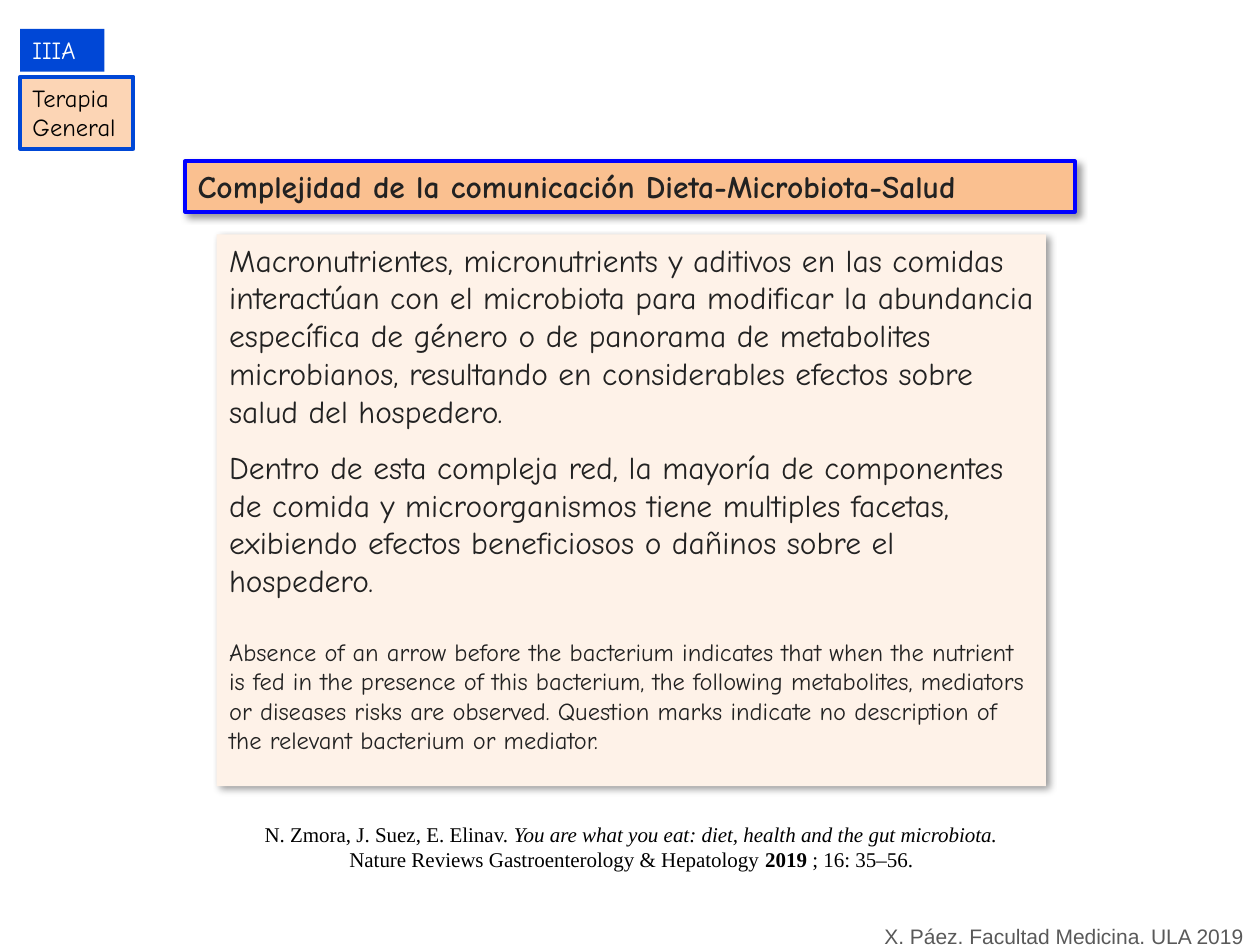
"""Build the slide on the complexity of diet, microbiota and health communication."""
from lxml import etree
from pptx import Presentation
from pptx.dml.color import RGBColor
from pptx.enum.shapes import MSO_SHAPE
from pptx.enum.text import MSO_ANCHOR, PP_ALIGN
from pptx.oxml.ns import qn
from pptx.util import Inches, Pt

RECTANGLE = MSO_SHAPE.RECTANGLE
TOP = MSO_ANCHOR.TOP
LEFT, CENTER = PP_ALIGN.LEFT, PP_ALIGN.CENTER

THEME = {
    "hand": "Comic Neue", "serif": "Times New Roman", "sans": "Arial",
    "ink": "222222", "black": "000000", "white": "FFFFFF", "gray": "595959",
    "cream": "FEF2E8", "orange": "FAC090", "peach": "FCD5B5",
    "blue": "0047D6", "bright_blue": "0000FF",
    "large": 18, "small": 14, "tiny": 12, "border": 2.25,
}

# Each paragraph is (space before in points, size, runs); each run is (text, style).
EXPLANATION = [
    (0, "large", [("Macronutrientes, micronutrients y aditivos en las comidas interactúan con "
                   "el microbiota para modificar la abundancia específica de género o de panorama "
                   "de metabolites microbianos, resultando en considerables efectos sobre salud "
                   "del hospedero.", "")]),
    (10.5, "large", [("Dentro de esta compleja red, la mayoría de componentes de comida y "
                      "microorganismos tiene multiples facetas, exibiendo efectos beneficiosos "
                      "o dañinos sobre el hospedero.", "")]),
    (21.5, "small", [("Absence of an arrow before the bacterium indicates that when the nutrient "
                      "is fed in the presence of this bacterium, the following metabolites, "
                      "mediators or diseases risks are observed. Question marks indicate no "
                      "description of the relevant bacterium or mediator.", "")]),
]
CITATION = [(0, "tiny", [
    ("N. Zmora, J. Suez, E. Elinav. ", ""),
    ("You are what you eat: diet, health and the gut microbiota. ", "italic"),
    ("Nature Reviews Gastroenterology & Hepatology ", ""),
    ("2019", "bold"),
    (" ; 16: 35–56.", ""),
])]
TITLE = [(0, "large", [("Complejidad de la comunicación Dieta-Microbiota-Salud", "bold")])]
UNIT = [(0, "small", [("IIIA", "")])]
TOPIC = [(0, "small", [("Terapia", "")]), (0, "small", [("General", "")])]
CREDIT = [(0, "tiny", [("X. Páez. Facultad Medicina. ULA 2019", "")])]

PANELS = [
    {"at": (1.72, 1.86, 6.58, 4.38), "text": EXPLANATION, "font": "hand", "color": "ink",
     "fill": "cream", "shadow": True},
    {"at": (1.8, 6.47, 6.42, 0.5), "text": CITATION, "font": "serif", "color": "black",
     "align": CENTER},
    {"at": (1.47, 1.28, 7.06, 0.4), "text": TITLE, "font": "hand", "color": "ink",
     "fill": "orange", "line": "bright_blue", "shadow": True},
    {"at": (0.16, 0.23, 0.67, 0.34), "text": UNIT, "font": "hand", "color": "white",
     "fill": "blue"},
    {"at": (0.16, 0.61, 0.9, 0.57), "text": TOPIC, "font": "hand", "color": "black",
     "fill": "peach", "line": "blue"},
    {"at": (6.92, 7.28, 3.08, 0.3), "text": CREDIT, "font": "sans", "color": "gray"},
]


def rgb(name):
    """Return a theme colour."""
    return RGBColor.from_string(THEME[name])


def add_shadow(panel):
    """Give a panel a soft shadow towards the lower right."""
    effects = panel._element.spPr.find(qn("a:effectLst"))
    shadow = etree.SubElement(effects, qn("a:outerShdw"), blurRad=str(Pt(4)),
                              dist=str(Pt(3)), dir="2700000", algn="tl", rotWithShape="0")
    color = etree.SubElement(shadow, qn("a:srgbClr"), val=THEME["black"])
    etree.SubElement(color, qn("a:alpha"), val="40000")


def write(frame, paragraphs, font, color, align):
    """Write styled paragraphs into a text frame."""
    frame.word_wrap = True
    frame.vertical_anchor = TOP
    for index, (space, size, runs) in enumerate(paragraphs):
        paragraph = frame.add_paragraph() if index else frame.paragraphs[0]
        paragraph.alignment = align
        if space:
            paragraph.space_before = Pt(space)
        for words, style in runs:
            run = paragraph.add_run()
            run.text = words
            run.font.name = THEME[font]
            run.font.size = Pt(THEME[size])
            run.font.color.rgb = rgb(color)
            run.font.bold = style == "bold"
            run.font.italic = style == "italic"


def add_panel(slide, at, text, font, color, fill=None, line=None, shadow=False, align=LEFT):
    """Add a filled rectangle or a plain text box with its text."""
    place = [Inches(length) for length in at]
    if fill:
        panel = slide.shapes.add_shape(RECTANGLE, *place)
        panel.shadow.inherit = False
        panel.fill.solid()
        panel.fill.fore_color.rgb = rgb(fill)
        if line:
            panel.line.color.rgb = rgb(line)
            panel.line.width = Pt(THEME["border"])
        else:
            panel.line.fill.background()
        if shadow:
            add_shadow(panel)
    else:
        panel = slide.shapes.add_textbox(*place)
    write(panel.text_frame, text, font, color, align)


def main():
    """Build and save the slide."""
    deck = Presentation()
    deck.slide_width, deck.slide_height = Inches(10), Inches(7.5)
    slide = deck.slides.add_slide(deck.slide_layouts[6])
    for panel in PANELS:
        add_panel(slide, **panel)
    deck.save("out.pptx")


if __name__ == "__main__":
    main()
